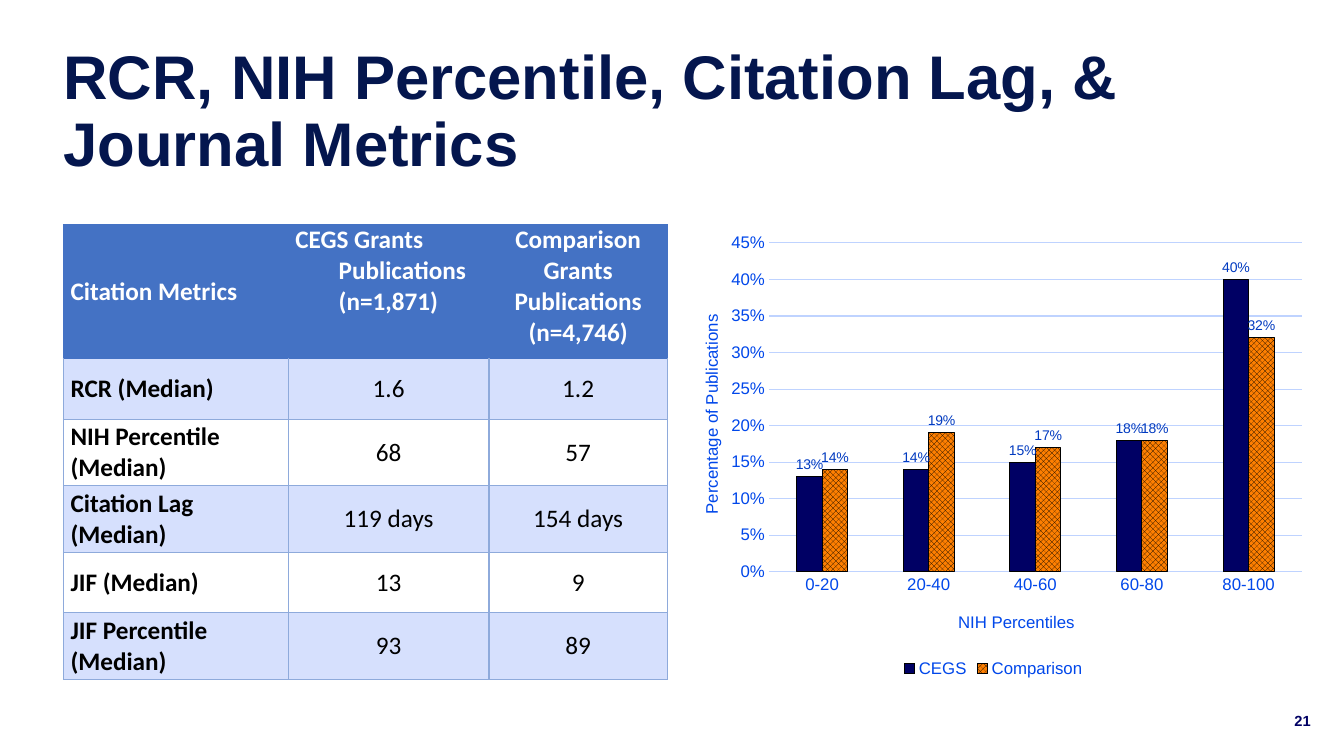
"""Build the citation metrics slide with a table and a column chart."""
from lxml.etree import SubElement
from pptx import Presentation
from pptx.chart.data import CategoryChartData
from pptx.dml.color import RGBColor
from pptx.enum.chart import XL_CHART_TYPE, XL_LABEL_POSITION, XL_LEGEND_POSITION, XL_TICK_MARK
from pptx.enum.dml import MSO_PATTERN
from pptx.enum.text import MSO_ANCHOR, PP_ALIGN
from pptx.oxml import parse_xml
from pptx.oxml.ns import nsdecls, qn
from pptx.util import Inches, Pt

TITLE = "RCR, NIH Percentile, Citation Lag, & Journal Metrics"
PAGE = "21"
ROWS = [
    ("Citation Metrics", "CEGS Grants\vPublications\v(n=1,871)",
     "Comparison Grants Publications (n=4,746)"),
    ("RCR (Median)", "1.6", "1.2"),
    ("NIH Percentile (Median)", "68", "57"),
    ("Citation Lag (Median)", "119 days", "154 days"),
    ("JIF (Median)", "13", "9"),
    ("JIF Percentile (Median)", "93", "89"),
]
COL_WIDTHS = (2.23, 1.99, 1.77)
ROW_HEIGHTS = (1.33, 0.6, 0.66, 0.66, 0.6, 0.66)
CATEGORIES = ("0-20", "20-40", "40-60", "60-80", "80-100")
SERIES = {
    "CEGS": (0.13, 0.14, 0.15, 0.18, 0.4),
    "Comparison": (0.14, 0.19, 0.17, 0.18, 0.32),
}
CAT_TITLE, VAL_TITLE = "NIH Percentiles", "Percentage of Publications"
TOP, HEIGHT = 2.23, 4.53
THEME = {
    "title": "04164E", "navy": "000064", "orange": "FE7F01", "black": "000000",
    "white": "FFFFFF", "header": "4472C4", "band": "D6E0FD", "border": "8EAADB",
    "axis": "0047EA", "label": "003AC0", "grid": "BFD3FF",
    "font": "Arial", "table_font": "Calibri",
    "title_size": 44, "table_size": 18, "axis_size": 12, "label_size": 10, "page_size": 10.5,
}


def rgb(name):
    return RGBColor.from_string(THEME[name])


def style(font, size, color, bold=False, face="font"):
    font.name, font.size, font.bold = THEME[face], Pt(THEME[size]), bold
    font.color.rgb = rgb(color)


def set_borders(cell, colors):
    tc_pr = cell._tc.get_or_add_tcPr()
    for i, (side, color) in enumerate(zip("LRTB", colors)):
        tc_pr.insert(i, parse_xml(
            f'<a:ln{side} {nsdecls("a")} w="12700"><a:solidFill>'
            f'<a:srgbClr val="{THEME[color]}"/></a:solidFill></a:ln{side}>'))


def place(parent, **fractions):
    layout = parent.find(qn("c:layout"))
    if layout is None:
        layout = parse_xml(f'<c:layout {nsdecls("c")}/>')
        parent.insert(0, layout)
    manual = SubElement(layout, qn("c:manualLayout"))
    if "w" in fractions:
        SubElement(manual, qn("c:layoutTarget")).set("val", "inner")
    for key in ("x", "y"):
        SubElement(manual, qn(f"c:{key}Mode")).set("val", "edge")
    for key, value in fractions.items():
        SubElement(manual, qn(f"c:{key}")).set("val", str(value))


def add_title(s):
    sp = s.shapes.title
    sp.left, sp.top, sp.width, sp.height = map(Inches, (0.63, 0.38, 12.07, 1.48))
    tf = sp.text_frame
    tf.text = TITLE
    tf.margin_left, tf.vertical_anchor = 0, MSO_ANCHOR.MIDDLE
    p = tf.paragraphs[0]
    p.alignment, p.line_spacing = PP_ALIGN.LEFT, 0.9
    style(p.runs[0].font, "title_size", "title", True)


def fill_cell(cell, text, row, col):
    header = row == 0
    cell.margin_left = cell.margin_right = Inches(0.07)
    cell.margin_top = cell.margin_bottom = 0
    cell.vertical_anchor = MSO_ANCHOR.TOP if header and col else MSO_ANCHOR.MIDDLE
    if row % 2 or header:
        cell.fill.solid()
        cell.fill.fore_color.rgb = rgb("header" if header else "band")
    else:
        cell.fill.background()
    side = "header" if header else "border"
    set_borders(cell, (side, side, "header" if row < 2 else "border", side))
    p = cell.text_frame.paragraphs[0]
    p.text = text
    p.space_after = Pt(6)
    p.alignment = PP_ALIGN.CENTER if col else PP_ALIGN.LEFT
    if "\v" in text:
        p.alignment = PP_ALIGN.LEFT
        p_pr = p._p.get_or_add_pPr()
        p_pr.set("marL", str(Inches(0.43)))
        p_pr.set("indent", str(-Inches(0.43)))
    for r in p.runs:
        style(r.font, "table_size", "white" if header else "black",
              header or col == 0, "table_font")


def add_metrics_table(s):
    table = s.shapes.add_table(len(ROWS), len(COL_WIDTHS), Inches(0.63), Inches(TOP),
                               Inches(sum(COL_WIDTHS)), Inches(HEIGHT)).table
    table.horz_banding = False
    for column, width in zip(table.columns, COL_WIDTHS):
        column.width = Inches(width)
    for i, (height, texts) in enumerate(zip(ROW_HEIGHTS, ROWS)):
        table.rows[i].height = Inches(height)
        for j, text in enumerate(texts):
            fill_cell(table.cell(i, j), text, i, j)


def style_axis(axis, title, x, y):
    axis.major_tick_mark = axis.minor_tick_mark = XL_TICK_MARK.NONE
    style(axis.tick_labels.font, "axis_size", "axis")
    tf = axis.axis_title.text_frame
    tf.text = title
    style(tf.paragraphs[0].runs[0].font, "axis_size", "axis")
    place(axis.axis_title.element, x=x, y=y)


def style_series(series, pattern=None):
    fill = series.format.fill
    if pattern:
        fill.patterned()
        fill.pattern = pattern
        fill.fore_color.rgb, fill.back_color.rgb = rgb("black"), rgb("orange")
    else:
        fill.solid()
        fill.fore_color.rgb = rgb("navy")
    series.format.line.color.rgb = rgb("black")
    series.format.line.width = Pt(0.75)
    labels = series.data_labels
    labels.show_value = True
    labels.position = XL_LABEL_POSITION.OUTSIDE_END
    labels.number_format, labels.number_format_is_linked = "0%", False
    style(labels.font, "label_size", "label")


def add_percentile_chart(s):
    data = CategoryChartData(number_format="0%")
    data.categories = CATEGORIES
    for name, values in SERIES.items():
        data.add_series(name, values)
    chart = s.shapes.add_chart(XL_CHART_TYPE.COLUMN_CLUSTERED, Inches(6.67), Inches(TOP),
                               Inches(6.37), Inches(HEIGHT), data).chart
    style(chart.font, "axis_size", "axis")
    chart.has_title = False
    chart.has_legend = True
    chart.legend.position = XL_LEGEND_POSITION.BOTTOM
    chart.legend.include_in_layout = False
    style(chart.legend.font, "axis_size", "axis")
    plot = chart.plots[0]
    plot.gap_width, plot.vary_by_categories = 219, False
    for series, pattern in zip(plot.series, (None, MSO_PATTERN.OUTLINED_DIAMOND)):
        style_series(series, pattern)
    cat, val = chart.category_axis, chart.value_axis
    style_axis(cat, CAT_TITLE, 0.44, 0.84)
    style_axis(val, VAL_TITLE, 0.04, 0.19)
    val.minimum_scale, val.maximum_scale, val.major_unit = 0, 0.45, 0.05
    val.tick_labels.number_format, val.tick_labels.number_format_is_linked = "0%", False
    val.format.line.fill.background()
    for line in (cat.format.line, val.major_gridlines.format.line):
        line.color.rgb, line.width = rgb("grid"), Pt(0.75)
    place(chart.element.find(".//" + qn("c:plotArea")), x=0.15, y=0.04, w=0.83, h=0.72)


def add_page_number(s):
    tf = s.shapes.add_textbox(*map(Inches, (12.74, 6.95, 0.38, 0.4))).text_frame
    tf.text = PAGE
    tf.word_wrap, tf.vertical_anchor = True, MSO_ANCHOR.MIDDLE
    style(tf.paragraphs[0].runs[0].font, "page_size", "navy", True)


def main():
    prs = Presentation()
    prs.slide_width, prs.slide_height = Inches(13.33), Inches(7.5)
    s = prs.slides.add_slide(prs.slide_layouts[5])
    add_title(s)
    add_metrics_table(s)
    add_percentile_chart(s)
    add_page_number(s)
    prs.save("out.pptx")


if __name__ == "__main__":
    main()
